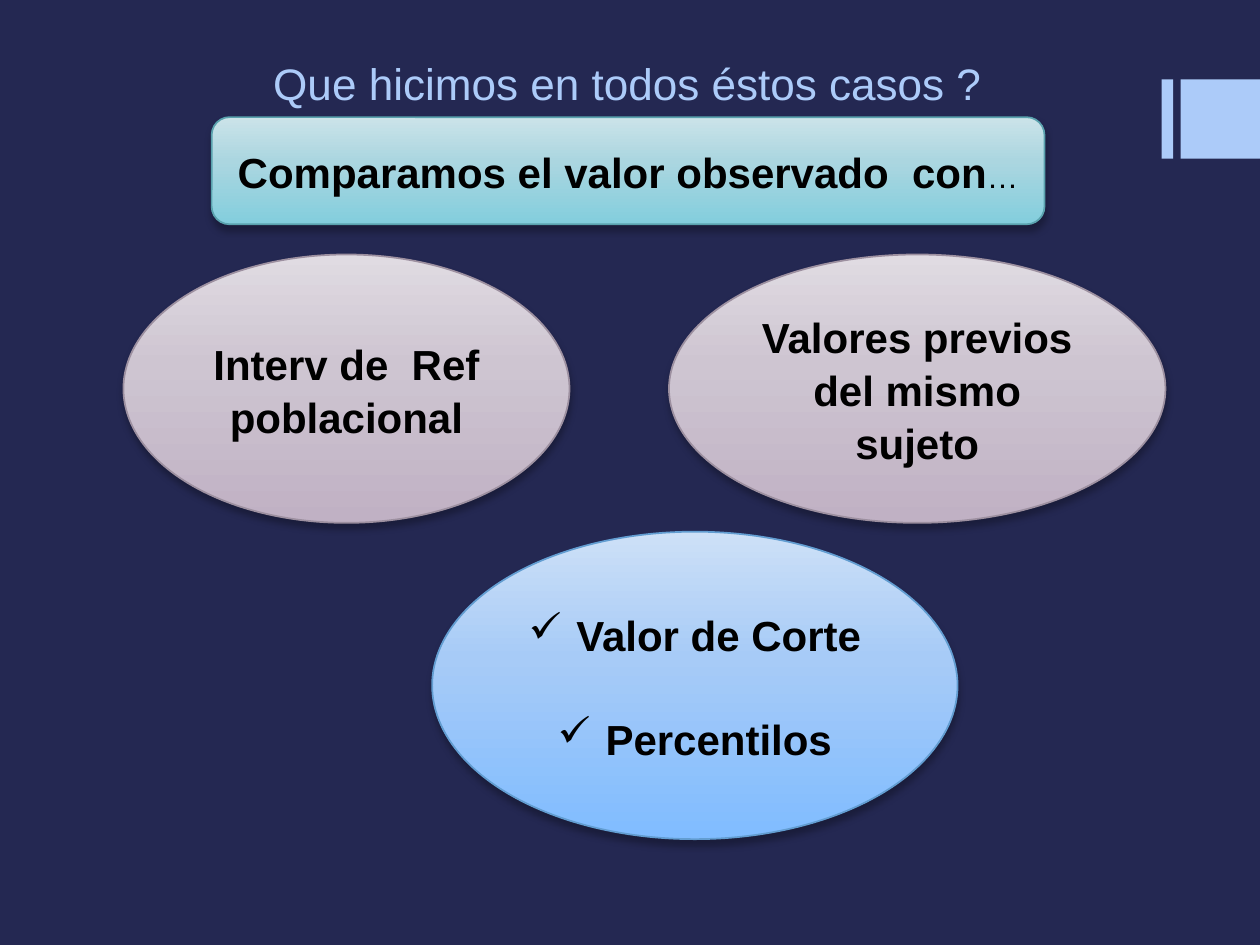
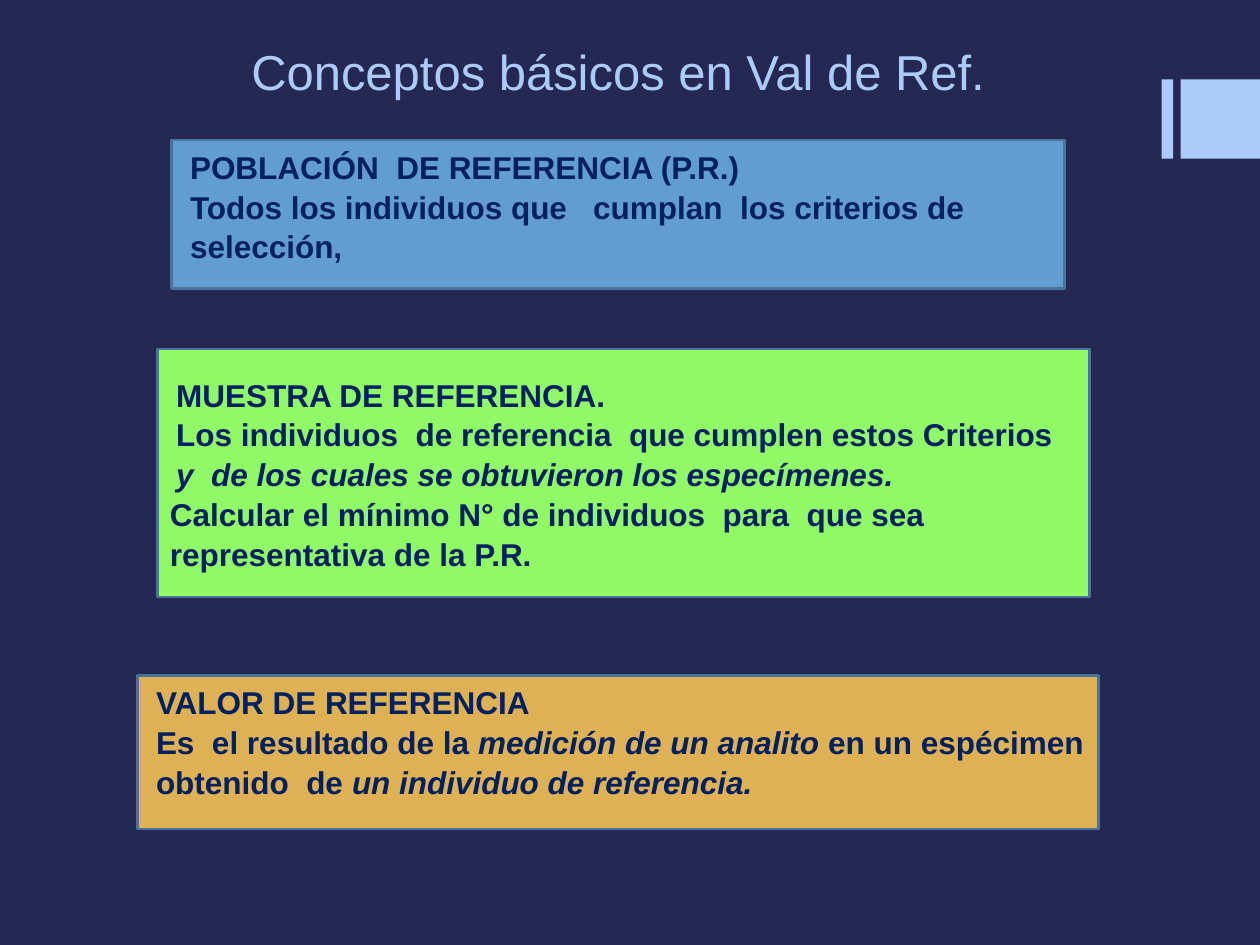
from copy import deepcopy
from lxml import etree
from pptx import Presentation
from pptx.dml.color import RGBColor
from pptx.enum.shapes import MSO_SHAPE
from pptx.enum.text import MSO_ANCHOR, MSO_AUTO_SIZE, PP_ALIGN
from pptx.oxml import parse_xml
from pptx.oxml.ns import nsdecls, qn
from pptx.util import Inches, Pt

RECT, ROUND, OVAL = MSO_SHAPE.RECTANGLE, MSO_SHAPE.ROUNDED_RECTANGLE, MSO_SHAPE.OVAL
TOP, MIDDLE = MSO_ANCHOR.TOP, MSO_ANCHOR.MIDDLE
LEFT, CENTER = PP_ALIGN.LEFT, PP_ALIGN.CENTER

FONT = "Arial"
NIGHT, SKY, BLACK, NAVY, EDGE = "242852", "ACCBF9", "000000", "002060", "49749B"
TEAL = ["CBE3E9", "ABD6E0", "83CEDD"], "5AA2AE"
MAUVE = ["E0DBE2", "CEC5D1", "C0B1C4"], "9D90A0"
BLUE = ["CDE0F7", "A7CBF7", "80BCFF"], "629DD1"
STOPS = [0, 0.41, 1]
SHADOW = (f'<a:outerShdw {nsdecls("a")} blurRad="{Pt(4)}" dist="{Pt(3)}" dir="5400000" '
          'rotWithShape="0"><a:srgbClr val="000000"><a:alpha val="28000"/>'
          '</a:srgbClr></a:outerShdw>')


def color(code):
    return RGBColor.from_string(code)


def add_box(slide, kind, place, edge, width, anchor):
    box = slide.shapes.add_shape(kind, *map(Inches, place))
    box.shadow.inherit = False
    box.line.color.rgb = color(edge)
    box.line.width = Pt(width)
    box.text_frame.word_wrap = True
    box.text_frame.vertical_anchor = anchor
    return box


prs = Presentation()
prs.slide_width, prs.slide_height = Inches(10), Inches(7.5)
master = prs.slide_master
master.background.fill.solid()
master.background.fill.fore_color.rgb = color(NIGHT)

# Slides with their titles: text, place, size, anchor, top margin
titles = [
    ("Que hicimos en todos éstos casos ?", (0.98, 0.36, 8, 0.33), 25.2, TOP, 0.09),
    ("Conceptos básicos en Val de Ref.", (0.75, 0.21, 8.31, 0.71), 28, MIDDLE, 0.05),
]
for text, place, size, anchor, margin in titles:
    slide = prs.slides.add_slide(prs.slide_layouts[5])
    title = slide.shapes.title
    title.left, title.top, title.width, title.height = map(Inches, place)
    frame = title.text_frame
    frame.text = text
    frame.auto_size = MSO_AUTO_SIZE.NONE
    frame.vertical_anchor = anchor
    frame.margin_top = Inches(margin)
    para = frame.paragraphs[0]
    para.alignment = CENTER
    for name, value in {"name": FONT, "size": Pt(size), "bold": False}.items():
        setattr(para.runs[0].font, name, value)
    para.runs[0].font.color.rgb = color(SKY)
first, second = prs.slides

# Side bands, shared through the master
for number, (left, width) in enumerate([(9.22, 0.09), (9.37, 0.63)]):
    band = first.shapes.add_shape(RECT, *map(Inches, (left, 0.63, width, 0.63)))
    band.shadow.inherit = False
    band.fill.solid()
    band.fill.fore_color.rgb = color(SKY)
    band.line.fill.background()
    band.element.nvSpPr.cNvPr.set("id", str(20 + number))
    master.shapes.element.append(band.element)

# Slide 1: what the observed value is compared with
bubbles = [
    (ROUND, (1.68, 0.93, 6.61, 0.85), TEAL, ["Comparamos el valor observado  con"]),
    (OVAL, (0.98, 2.02, 3.54, 2.13), MAUVE, ["Interv de  Ref poblacional"]),
    (OVAL, (3.43, 4.22, 4.17, 2.44), BLUE, ["Valor de Corte", "Percentilos"]),
    (OVAL, (5.31, 2.02, 3.94, 2.13), MAUVE, ["Valores previos del mismo sujeto"]),
]
for kind, place, (tones, edge), lines in bubbles:
    box = add_box(first, kind, place, edge, 1, MIDDLE)
    box.element.spPr.find(qn("a:effectLst")).append(parse_xml(SHADOW))
    box.fill.gradient()
    box.fill.gradient_angle = 270
    stops = box.element.spPr.find(qn("a:gradFill")).find(qn("a:gsLst"))
    stops.insert(1, deepcopy(stops[0]))
    for stop, spot, tone in zip(box.fill.gradient_stops, STOPS, tones):
        stop.position = spot
        stop.color.rgb = color(tone)

    frame = box.text_frame
    for row, line in enumerate(lines):
        para = frame.add_paragraph() if row else frame.paragraphs[0]
        para.alignment = CENTER
        para.line_spacing = 1.05
        para.space_before = Pt(29 * row)
        parts = [(line, 24, True)]
        if kind == ROUND:
            parts.append(("…", 18, False))
        for text, size, bold in parts:
            run = para.add_run()
            run.text = text
            for name, value in {"name": FONT, "size": Pt(size), "bold": bold}.items():
                setattr(run.font, name, value)
            run.font.color.rgb = color(BLACK)
        if len(lines) > 1:
            props = para._p.get_or_add_pPr()
            props.set("marL", str(Inches(0.38)))
            props.set("indent", str(Inches(-0.38)))
            etree.SubElement(props, qn("a:buChar"), char="✓")

# Slide 2: concept panels; each paragraph is an indent and (text, italic) runs
panels = [
    ((1.36, 1.11, 7.09, 1.18), "629DD1", TOP, [
        (0.05, [("POBLACIÓN  DE REFERENCIA (P.R.)", False)]),
        (0.05, [("Todos los individuos que   cumplan  los criterios de selección,", False)]),
    ]),
    ((1.25, 2.77, 7.4, 1.97), "91F868", MIDDLE, [
        (0.05, [("MUESTRA DE REFERENCIA.", False)]),
        (0.05, [("Los individuos  de referencia  que cumplen estos Criterios ", False),
                ("y  de los cuales se obtuvieron los especímenes.", True)]),
        (0, [("Calcular el mínimo N° de individuos  para  que sea "
              "representativa de la P.R.", False)]),
    ]),
    ((1.09, 5.36, 7.63, 1.22), "DFB155", TOP, [
        (0.05, [("VALOR DE REFERENCIA", False)]),
        (0.05, [("Es  el resultado de la ", False), ("medición de un analito ", True),
                ("en un espécimen obtenido  de ", False),
                ("un individuo de referencia.", True)]),
    ]),
]
for place, tone, anchor, lines in panels:
    box = add_box(second, RECT, place, EDGE, 1.5, anchor)
    box.fill.solid()
    box.fill.fore_color.rgb = color(tone)
    frame = box.text_frame
    for row, (indent, parts) in enumerate(lines):
        para = frame.add_paragraph() if row else frame.paragraphs[0]
        para.alignment = LEFT
        para.line_spacing = 1.05
        para._p.get_or_add_pPr().set("marL", str(Inches(indent)))
        for text, slant in parts:
            run = para.add_run()
            run.text = text
            style = {"name": FONT, "size": Pt(18), "bold": True, "italic": slant}
            for name, value in style.items():
                setattr(run.font, name, value)
            run.font.color.rgb = color(NAVY)

prs.save("out.pptx")
